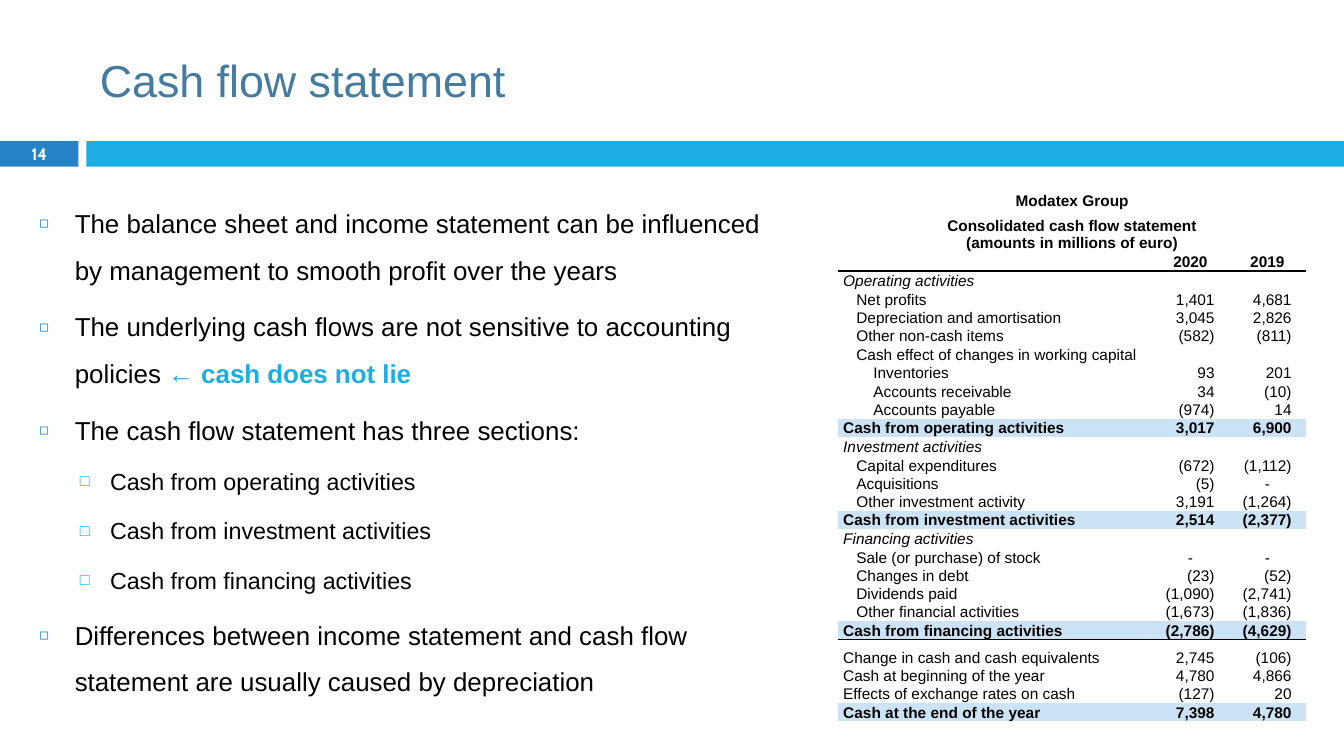
from lxml.etree import SubElement
from pptx import Presentation
from pptx.dml.color import RGBColor as Rgb
from pptx.enum.shapes import MSO_SHAPE as Preset
from pptx.enum.text import MSO_ANCHOR as Anchor, MSO_AUTO_SIZE as AutoSize, PP_ALIGN as Align
from pptx.oxml import parse_xml
from pptx.oxml.ns import nsdecls, qn
from pptx.util import Cm, Pt

COLOURS = {"title": "457B9E", "dark": "2683C6", "accent": "1CADE4",
           "text": "000000", "white": "FFFFFF", "total": "CCE3F5"}
NO_STYLE = "{2D5ABB26-0587-4C30-8999-92F81FD0307C}"

LEVELS = [
    {"size": 18.5, "left": 0.89, "hang": 0.89, "before": 7, "bullet": "◻", "scale": 60, "colour": "dark"},
    {"size": 16.6, "left": 1.78, "hang": 0.76, "before": 5.5, "bullet": "□", "scale": 70, "colour": "accent"},
]
POINTS = [
    (0, "The balance sheet and income statement can be influenced by management "
        "to smooth profit over the years", ""),
    (0, "The underlying cash flows are not sensitive to accounting policies ", "← cash does not lie"),
    (0, "The cash flow statement has three sections:", ""),
    (1, "Cash from operating activities", ""),
    (1, "Cash from investment activities", ""),
    (1, "Cash from financing activities", ""),
    (0, "Differences between income statement and cash flow statement are usually caused by depreciation", ""),
]

ROW_FORMATS = {
    "title": {"bold": True},
    "years": {"bold": True},
    "section": {"italic": True},
    "item": {},
    "subitem": {},
    "total": {"bold": True},
    "balance": {},
}
LABEL_INDENTS = {"item": 0.33, "subitem": 0.76}
STATEMENT = [
    ("title", "Modatex Group", "", ""),
    ("title", "Consolidated cash flow statement\n(amounts in millions of euro)", "", ""),
    ("years", "", "2020", "2019"),
    ("section", "Operating activities", "", ""),
    ("item", "Net profits", "1,401", "4,681"),
    ("item", "Depreciation and amortisation", "3,045", "2,826"),
    ("item", "Other non-cash items", "(582)", "(811)"),
    ("item", "Cash effect of changes in working capital", "", ""),
    ("subitem", "Inventories", "93", "201"),
    ("subitem", "Accounts receivable", "34", "(10)"),
    ("subitem", "Accounts payable", "(974)", "14"),
    ("total", "Cash from operating activities", "3,017", "6,900"),
    ("section", "Investment activities", "", ""),
    ("item", "Capital expenditures", "(672)", "(1,112)"),
    ("item", "Acquisitions", "(5)", "-"),
    ("item", "Other investment activity", "3,191", "(1,264)"),
    ("total", "Cash from investment activities", "2,514", "(2,377)"),
    ("section", "Financing activities", "", ""),
    ("item", "Sale (or purchase) of stock", "-", "-"),
    ("item", "Changes in debt", "(23)", "(52)"),
    ("item", "Dividends paid", "(1,090)", "(2,741)"),
    ("item", "Other financial activities", "(1,673)", "(1,836)"),
    ("total", "Cash from financing activities", "(2,786)", "(4,629)"),
    ("balance", "Change in cash and cash equivalents", "2,745", "(106)"),
    ("balance", "Cash at beginning of the year", "4,780", "4,866"),
    ("balance", "Effects of exchange rates on cash", "(127)", "20"),
    ("total", "Cash at the end of the year", "7,398", "4,780"),
]
ROW_HEIGHTS = {0: 0.56, 1: 1.07, 23: 0.69}
RULED_ROWS = {2, 22}


def apply(target, formats):
    """Set every attribute named in formats on target."""
    for name, value in formats.items():
        setattr(target, name, value)


def add_text(paragraph, wording, size, colour="text", font="Arial", **formats):
    """Append one formatted run to a paragraph."""
    run = paragraph.add_run()
    run.text = wording
    apply(run.font, {"name": font, "size": Pt(size), **formats})
    run.font.color.rgb = Rgb.from_string(COLOURS[colour])


def place(part, box):
    """Move a part to a box of left, top, width and height in centimetres."""
    apply(part, dict(zip(("left", "top", "width", "height"), map(Cm, box))))


def build_heading(heading, box):
    """Fill the title placeholder."""
    place(heading, box)
    apply(heading.text_frame, {"vertical_anchor": Anchor.MIDDLE, "word_wrap": True,
                               "auto_size": AutoSize.NONE})
    line = heading.text_frame.paragraphs[0]
    line.alignment = Align.LEFT
    add_text(line, "Cash flow statement", 32, "title")


def build_band(slide, box, number):
    """Draw the page number block and the bar beside it."""
    left, top, width, height = box
    block, gap = 1.98, 0.2
    parts = [("dark", left, block, number),
             ("accent", left + block + gap, width - block - gap, "")]
    for colour, start, length, wording in parts:
        bar = slide.shapes.add_shape(Preset.RECTANGLE, *map(Cm, (start, top, length, height)))
        bar.shadow.inherit = False
        bar.fill.solid()
        bar.fill.fore_color.rgb = Rgb.from_string(COLOURS[colour])
        bar.line.fill.background()
        if wording:
            apply(bar.text_frame, {"margin_top": 0, "margin_bottom": 0,
                                   "vertical_anchor": Anchor.MIDDLE})
            line = bar.text_frame.paragraphs[0]
            line.alignment = Align.CENTER
            add_text(line, wording, 11.9, "white", "Cabin", bold=True)


def build_points(body, box):
    """Fill the body placeholder with the two-level list."""
    place(body, box)
    frame = body.text_frame
    apply(frame, {"word_wrap": True, "auto_size": AutoSize.NONE, "vertical_anchor": Anchor.TOP})
    for index, (depth, wording, emphasis) in enumerate(POINTS):
        point = frame.add_paragraph() if index else frame.paragraphs[0]
        level = LEVELS[depth]
        apply(point, {"level": depth, "line_spacing": 1.5, "space_before": Pt(level["before"]),
                      "space_after": Pt(0), "alignment": Align.LEFT})
        props = point._p.get_or_add_pPr()
        props.set("marL", str(Cm(level["left"])))
        props.set("indent", str(-Cm(level["hang"])))
        tint = SubElement(props, qn("a:buClr"))
        SubElement(tint, qn("a:srgbClr"), val=COLOURS[level["colour"]])
        SubElement(props, qn("a:buSzPct"), val=str(level["scale"] * 1000))
        SubElement(props, qn("a:buFont"), typeface="Arial")
        SubElement(props, qn("a:buChar"), char=level["bullet"])
        add_text(point, wording, level["size"])
        if emphasis:
            add_text(point, emphasis, level["size"], "accent", bold=True)


def fill_cell(cell, kind, column, wording):
    """Write and format one cell of the statement."""
    is_amount = column > 0 and kind != "years" and wording != "-"
    indent = 0 if column else LABEL_INDENTS.get(kind, 0)
    apply(cell, {"margin_left": Cm(0.12 + indent), "margin_right": Cm(0.36 if is_amount else 0.12),
                 "margin_top": 0, "margin_bottom": 0, "vertical_anchor": Anchor.BOTTOM})
    if kind == "total":
        cell.fill.solid()
        cell.fill.fore_color.rgb = Rgb.from_string(COLOURS["total"])
    else:
        cell.fill.background()
    for index, text in enumerate(wording.split("\n")):
        line = cell.text_frame.add_paragraph() if index else cell.text_frame.paragraphs[0]
        if is_amount:
            line.alignment = Align.RIGHT
        else:
            line.alignment = Align.CENTER if column or kind == "title" else Align.LEFT
        if text:
            add_text(line, text, 11, **ROW_FORMATS[kind])
        else:
            SubElement(line._p, qn("a:endParaRPr"), sz="1100")


def rule_below(cell):
    """Draw a thin line under a cell."""
    cell._tc.get_or_add_tcPr().insert(0, parse_xml(
        f'<a:lnB {nsdecls("a")} w="12700"><a:solidFill>'
        f'<a:srgbClr val="{COLOURS["text"]}"/></a:solidFill></a:lnB>'))


def build_statement(slide, box):
    """Build the cash flow table."""
    frame = slide.shapes.add_table(len(STATEMENT), 3, *map(Cm, box))
    statement = frame.table
    apply(statement, {"first_row": False, "horz_banding": False})
    statement._tbl.tblPr.find(qn("a:tableStyleId")).text = NO_STYLE
    amount_width = 1.94
    for column, width in enumerate((box[2] - 2 * amount_width, amount_width, amount_width)):
        statement.columns[column].width = Cm(width)
    for row, (kind, *wordings) in enumerate(STATEMENT):
        statement.rows[row].height = Cm(ROW_HEIGHTS.get(row, 0.46))
        for column, wording in enumerate(wordings):
            cell = statement.cell(row, column)
            fill_cell(cell, kind, column, wording)
            if row in RULED_ROWS:
                rule_below(cell)
        if kind == "title":
            statement.cell(row, 0).merge(statement.cell(row, 2))


def main():
    """Build the slide and save it."""
    deck = Presentation()
    apply(deck, {"slide_width": Cm(33.87), "slide_height": Cm(19.05)})
    slide = deck.slides.add_slide(deck.slide_layouts[1])
    build_band(slide, (0, 3.56, 33.87, 0.64), "14")
    build_heading(slide.shapes.title, (2.26, 0.64, 30.2, 2.74))
    build_points(slide.placeholders[1], (0.74, 4.72, 18.8, 13.28))
    build_statement(slide, (21.13, 4.72, 11.78, 13.36))
    deck.save("out.pptx")


if __name__ == "__main__":
    main()
